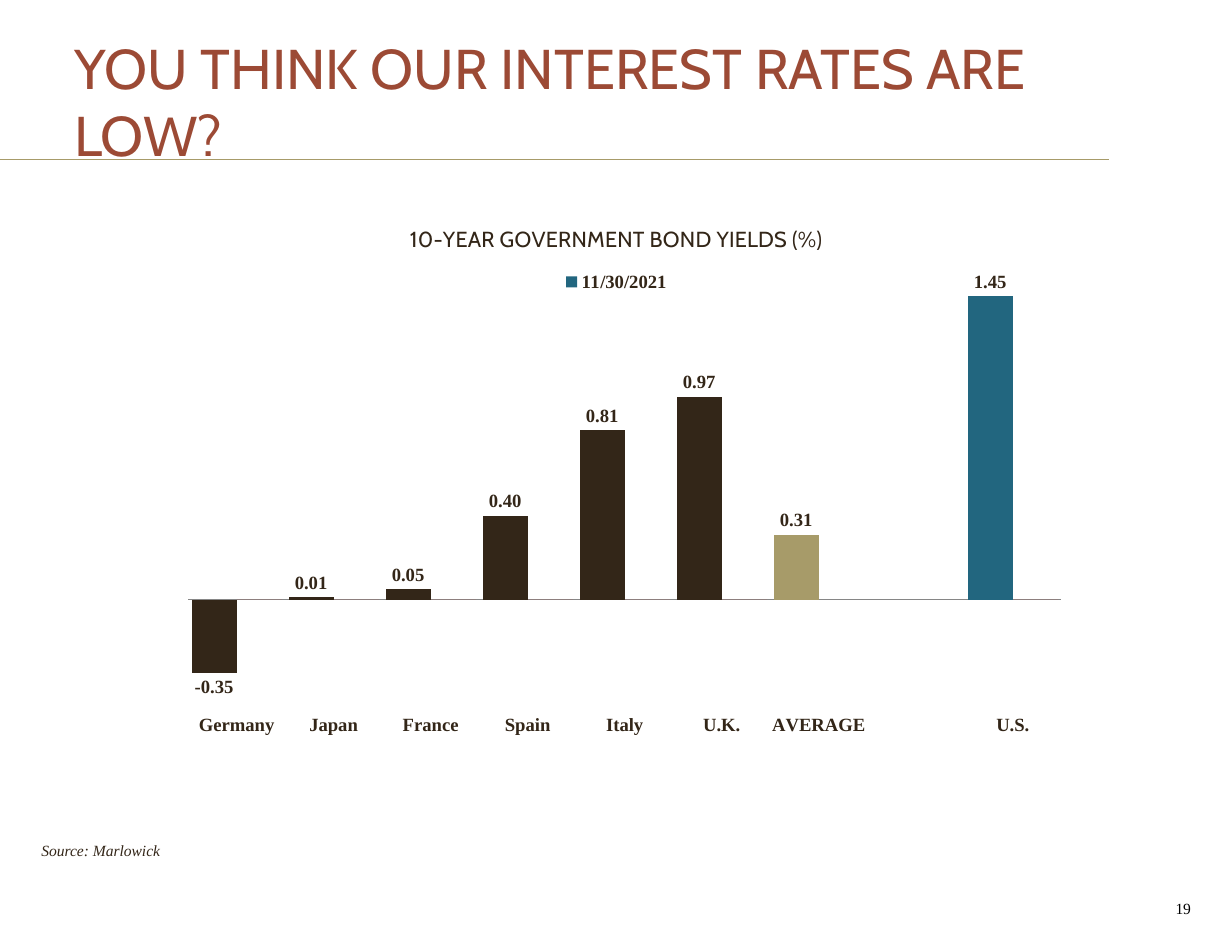
from lxml.etree import SubElement
from pptx import Presentation
from pptx.chart.data import CategoryChartData
from pptx.dml.color import RGBColor
from pptx.enum.chart import XL_CHART_TYPE, XL_LABEL_POSITION, XL_LEGEND_POSITION
from pptx.enum.chart import XL_TICK_LABEL_POSITION, XL_TICK_MARK
from pptx.enum.shapes import MSO_CONNECTOR
from pptx.enum.text import MSO_ANCHOR, MSO_AUTO_SIZE, PP_ALIGN
from pptx.oxml import parse_xml
from pptx.oxml.ns import nsdecls, qn
from pptx.util import Cm, Pt

YIELDS = {
    "Germany": -0.35, "Japan": 0.01, "France": 0.05, "Spain": 0.40, "Italy": 0.81,
    "U.K.": 0.97, "AVERAGE": 0.31, "": None, "U.S.": 1.45,
}


def rgb(hex_color):
    return RGBColor.from_string(hex_color)


def format_font(font, name, size, color, bold=False, italic=False):
    font.name, font.size = name, Pt(size)
    font.bold, font.italic = bold, italic
    font.color.rgb = rgb(color)


def write(frame, text, align=PP_ALIGN.LEFT, **font_format):
    paragraph = frame.paragraphs[0]
    paragraph.alignment = align
    run = paragraph.add_run()
    run.text = text
    format_font(run.font, **font_format)


def paint(part, color):
    part.format.fill.solid()
    part.format.fill.fore_color.rgb = rgb(color)


def place_plot(chart, x, y, w, h):
    """Fix the inner plot area, in fractions of the chart."""
    plot_area = chart.element.find(".//" + qn("c:plotArea"))
    for old in plot_area.findall(qn("c:layout")):
        plot_area.remove(old)
    sizes = "".join(f'<c:{tag} val="{value}"/>' for tag, value in zip("xywh", (x, y, w, h)))
    plot_area.insert(0, parse_xml(
        f'<c:layout {nsdecls("c")}><c:manualLayout><c:layoutTarget val="inner"/>'
        f'<c:xMode val="edge"/><c:yMode val="edge"/>{sizes}</c:manualLayout></c:layout>'))


def hide_legend_entry(chart, index):
    position = chart.element.find(".//" + qn("c:legendPos"))
    position.addnext(parse_xml(
        f'<c:legendEntry {nsdecls("c")}><c:idx val="{index}"/>'
        '<c:delete val="1"/></c:legendEntry>'))


class YieldSlide:
    HEADING, BODY = "Cabin", "Times New Roman"
    RUST, DARK, OLIVE, TEAL = "9C4A35", "332618", "A79B69", "22667F"
    LABEL = dict(name=BODY, size=12, color=DARK, bold=True)

    def __init__(self, presentation):
        self.slide = presentation.slides.add_slide(presentation.slide_layouts[5])

    def title(self, text, left, top, width, height):
        title = self.slide.shapes.title
        title.left, title.top, title.width, title.height = map(Cm, (left, top, width, height))
        frame = title.text_frame
        frame.auto_size = MSO_AUTO_SIZE.NONE
        frame.vertical_anchor = MSO_ANCHOR.MIDDLE
        frame.margin_left = frame.margin_right = Cm(0.28)
        frame.margin_top = frame.margin_bottom = Cm(0.15)
        write(frame, text, name=self.HEADING, size=36, color=self.RUST)

    def rule(self, left, right, y):
        rule = self.slide.shapes.add_connector(
            MSO_CONNECTOR.STRAIGHT, Cm(left), Cm(y), Cm(right), Cm(y))
        rule.line.color.rgb = rgb(self.OLIVE)
        rule.line.width = Pt(0.5)
        SubElement(rule.element.spPr, qn("a:effectLst"))

    def text(self, text, left, top, width, height, anchor=MSO_ANCHOR.TOP,
             inset=0.25, wrap=True, **text_format):
        box = self.slide.shapes.add_textbox(Cm(left), Cm(top), Cm(width), Cm(height))
        frame = box.text_frame
        frame.word_wrap = wrap
        frame.vertical_anchor = anchor
        frame.margin_left = frame.margin_right = Cm(inset)
        write(frame, text, name=self.BODY, size=10, **text_format)

    def yield_chart(self, heading, date, left, top, width, height):
        data = CategoryChartData(number_format="0.00")
        data.categories = list(YIELDS)
        data.add_series(date, YIELDS.values())
        data.add_series("Series 2", [None if name in ("AVERAGE", "") else 0 for name in YIELDS])
        chart = self.slide.shapes.add_chart(
            XL_CHART_TYPE.COLUMN_CLUSTERED, Cm(left), Cm(top), Cm(width), Cm(height), data).chart
        format_font(chart.font, "Calibri", 10, "000000")
        write(chart.chart_title.text_frame, heading, align=PP_ALIGN.CENTER,
              name=self.HEADING, size=14, color=self.DARK)
        place_plot(chart, 0.066, 0.053, 0.885, 0.785)

        chart.has_legend = True
        chart.legend.position = XL_LEGEND_POSITION.TOP
        chart.legend.include_in_layout = False
        format_font(chart.legend.font, **self.LABEL)
        hide_legend_entry(chart, 1)

        countries, rates = chart.category_axis, chart.value_axis
        countries.tick_label_position = XL_TICK_LABEL_POSITION.LOW
        countries.major_tick_mark = XL_TICK_MARK.NONE
        countries.format.line.color.rgb = rgb("868686")
        countries.format.line.width = Pt(0.75)
        format_font(countries.tick_labels.font, **self.LABEL)
        rates.minimum_scale, rates.maximum_scale, rates.major_unit = -0.5, 1.75, 0.25
        rates.has_major_gridlines = False
        rates.visible = False

        plot = chart.plots[0]
        plot.vary_by_categories = False
        plot.gap_width, plot.overlap = 15, 0
        yields, zeros = plot.series
        for series, color in ((yields, self.TEAL), (zeros, "C0504D")):
            paint(series, color)
            series.invert_if_negative = False
        average = list(YIELDS).index("AVERAGE")
        for country in range(average):
            paint(yields.points[country], self.DARK)
        paint(yields.points[average], self.OLIVE)

        labels = yields.data_labels
        labels.show_value = True
        labels.position = XL_LABEL_POSITION.OUTSIDE_END
        labels.number_format, labels.number_format_is_linked = "0.00", False
        format_font(labels.font, **self.LABEL)


def main():
    presentation = Presentation()
    presentation.slide_width, presentation.slide_height = Cm(27.94), Cm(21.59)
    page = YieldSlide(presentation)
    page.rule(0, 25.15, 3.61)
    page.title("YOU THINK OUR INTEREST RATES ARE LOW?", 1.4, 0.97, 23.52, 2.64)
    page.text("Source: Marlowick", 0.66, 18.95, 3.3, 0.76, inset=0.28, wrap=False,
              color=page.DARK, italic=True)
    page.text("19", 20.73, 20.04, 6.53, 1.14, anchor=MSO_ANCHOR.MIDDLE,
              align=PP_ALIGN.RIGHT, color="000000")
    page.yield_chart("10-YEAR GOVERNMENT BOND YIELDS (%)", "11/30/2021",
                     2.79, 4.57, 22.38, 13.61)
    presentation.save("out.pptx")


if __name__ == "__main__":
    main()
